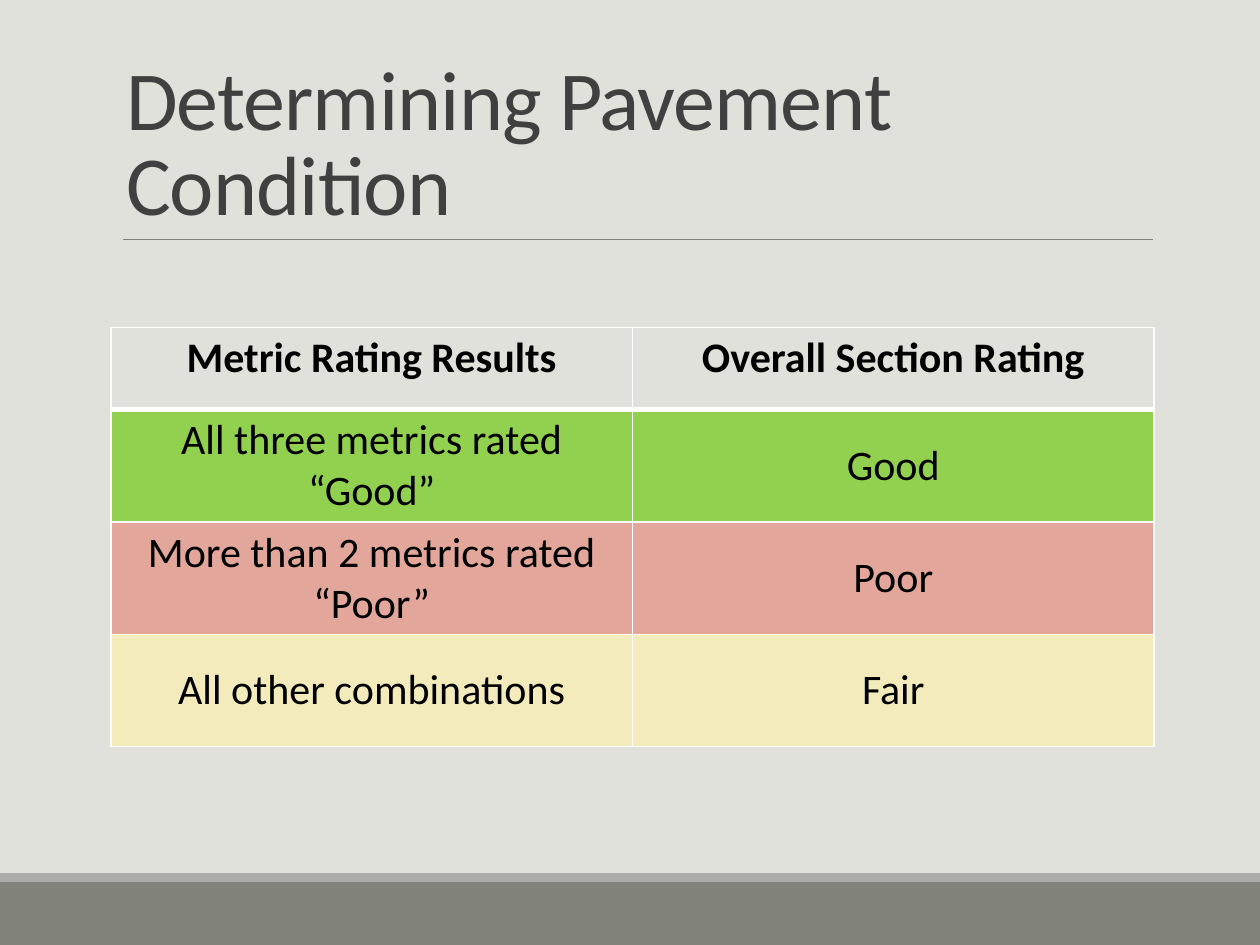
from lxml import etree
from pptx import Presentation
from pptx.dml.color import RGBColor
from pptx.enum.shapes import MSO_CONNECTOR, MSO_SHAPE
from pptx.enum.text import MSO_ANCHOR, PP_ALIGN
from pptx.oxml.ns import qn
from pptx.util import Inches, Pt

RECTANGLE = MSO_SHAPE.RECTANGLE
STRAIGHT = MSO_CONNECTOR.STRAIGHT
TOP, MIDDLE, BOTTOM = MSO_ANCHOR.TOP, MSO_ANCHOR.MIDDLE, MSO_ANCHOR.BOTTOM
LEFT, CENTER = PP_ALIGN.LEFT, PP_ALIGN.CENTER
TITLE_ONLY = 5

COLORS = {
    "background": "E1E1DB", "footer": "82847C", "footer edge": "ACADA8",
    "rule": "808080", "title": "404040", "text": "000000", "border": "FFFFFF",
    "good": "92D050", "poor": "E2A69A", "fair": "F4EBBD",
}
TITLE = "Determining Pavement Condition"
HEADER = ("Metric Rating Results", "Overall Section Rating")
RATINGS = [
    ("All three metrics rated “Good”", "Good", "good"),
    ("More than 2 metrics rated “Poor”", "Poor", "poor"),
    ("All other combinations", "Fair", "fair"),
]
FOOTER_BANDS = [(7, 0.5, "footer"), (6.93, 0.07, "footer edge")]
COLUMN_WIDTH, HEADER_HEIGHT, ROW_HEIGHT = 4.14, 0.65, 0.89


def color(name):
    return RGBColor.from_string(COLORS[name])


def write(frame, text, size=24, ink="text", bold=False, align=CENTER, spacing=1.0):
    para = frame.paragraphs[0]
    para.alignment = align
    para.line_spacing = spacing
    span = para.add_run()
    span.text = text
    span.font.name = "Calibri"
    span.font.size = Pt(size)
    span.font.bold = bold
    span.font.color.rgb = color(ink)
    return span


def add_borders(cell, bottom=1, top=1):
    properties = cell._tc.get_or_add_tcPr()
    for side, width in (("L", 1), ("R", 1), ("T", top), ("B", bottom)):
        line = etree.SubElement(properties, qn(f"a:ln{side}"), w=str(Pt(width)))
        fill = etree.SubElement(line, qn("a:solidFill"))
        etree.SubElement(fill, qn("a:srgbClr"), val=COLORS["border"])


def add_footer_and_rule(page):
    for top, height, name in FOOTER_BANDS:
        band = page.shapes.add_shape(
            RECTANGLE, 0, Inches(top), Inches(10), Inches(height))
        band.shadow.inherit = False
        band.fill.solid()
        band.fill.fore_color.rgb = color(name)
        band.line.fill.background()
    rule = page.shapes.add_connector(
        STRAIGHT, Inches(0.98), Inches(1.9), Inches(9.15), Inches(1.9))
    rule.line.color.rgb = color("rule")
    rule.line.width = Pt(0.5)
    etree.SubElement(rule._element.spPr, qn("a:effectLst"))


def fill_title(page):
    title = page.shapes.title
    title.left, title.top = Inches(0.9), Inches(0.31)
    title.width, title.height = Inches(8.25), Inches(1.59)
    frame = title.text_frame
    frame.word_wrap = True
    frame.vertical_anchor = BOTTOM
    span = write(frame, TITLE, size=48, ink="title", align=LEFT, spacing=0.85)
    span.font._element.set("spc", "-50")


def add_ratings_table(page):
    rows = [(*HEADER, None)] + RATINGS
    height = HEADER_HEIGHT + ROW_HEIGHT * len(RATINGS)
    table = page.shapes.add_table(
        len(rows), len(HEADER), Inches(0.88), Inches(2.6),
        Inches(COLUMN_WIDTH * len(HEADER)), Inches(height)).table
    for column in table.columns:
        column.width = Inches(COLUMN_WIDTH)
    for r, (*texts, fill) in enumerate(rows):
        is_header = fill is None
        table.rows[r].height = Inches(HEADER_HEIGHT if is_header else ROW_HEIGHT)
        for c, text in enumerate(texts):
            cell = table.cell(r, c)
            cell.margin_left = cell.margin_right = Inches(0.07)
            cell.margin_top = cell.margin_bottom = Inches(0.04)
            cell.vertical_anchor = TOP if is_header else MIDDLE
            add_borders(cell, bottom=3 if is_header else 1, top=3 if r == 1 else 1)
            if is_header:
                cell.fill.background()
            else:
                cell.fill.solid()
                cell.fill.fore_color.rgb = color(fill)
            write(cell.text_frame, text, bold=is_header)


def main():
    deck = Presentation()
    deck.slide_width, deck.slide_height = Inches(10), Inches(7.5)
    page = deck.slides.add_slide(deck.slide_layouts[TITLE_ONLY])
    page.background.fill.solid()
    page.background.fill.fore_color.rgb = color("background")
    add_footer_and_rule(page)
    fill_title(page)
    add_ratings_table(page)
    deck.save("out.pptx")


if __name__ == "__main__":
    main()
